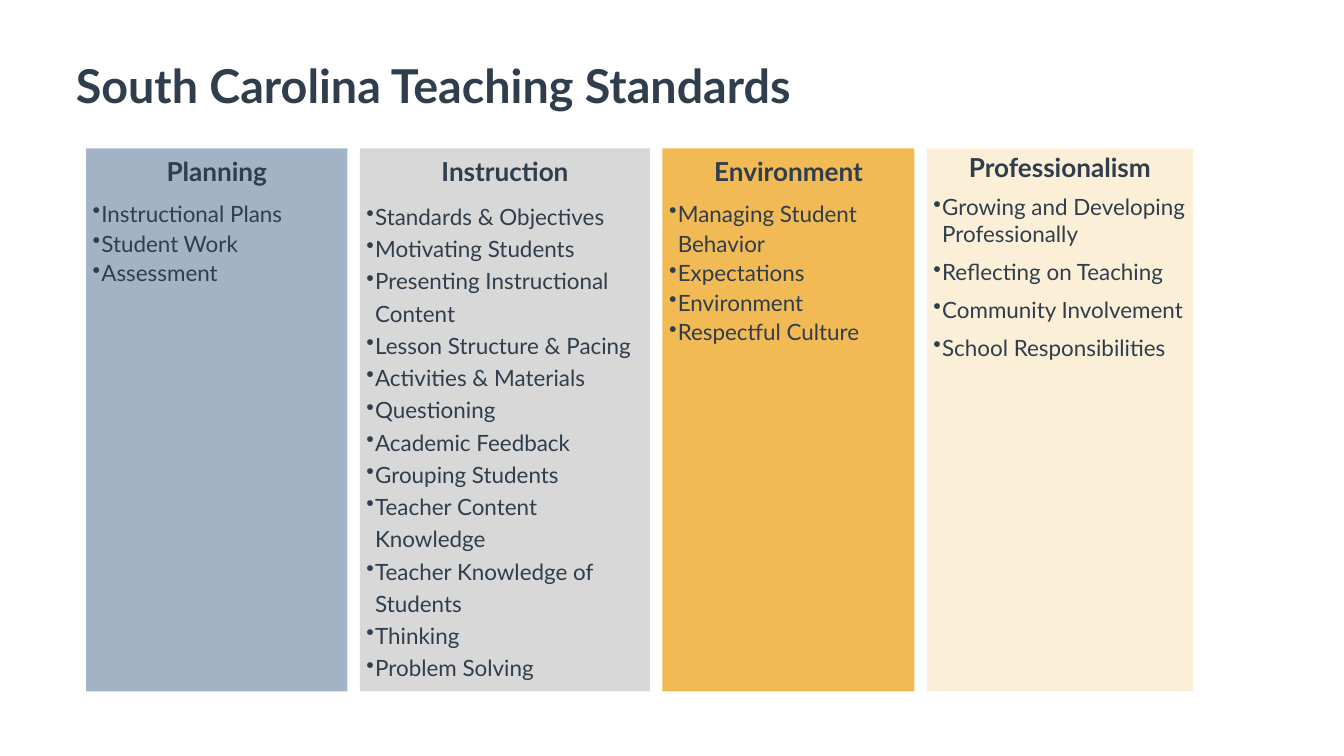
from dataclasses import dataclass

from lxml import etree
from pptx import Presentation
from pptx.dml.color import RGBColor
from pptx.enum.shapes import MSO_SHAPE
from pptx.enum.text import MSO_ANCHOR, PP_ALIGN
from pptx.oxml.ns import qn
from pptx.slide import Slide
from pptx.util import Inches, Pt

RECTANGLE = MSO_SHAPE.RECTANGLE
TOP = MSO_ANCHOR.TOP
LEFT, CENTER = PP_ALIGN.LEFT, PP_ALIGN.CENTER

SLIDE_WIDTH, SLIDE_HEIGHT = Inches(20), Inches(11.25)
BULLET_INDENT = Inches(0.13)

# Percent of the slide's width or height
TITLE_AREA = (5.15, 7.02, 89.7, 10.67)
COLUMNS_LEFT, COLUMNS_TOP, COLUMNS_HEIGHT = 6.4, 19.64, 71.82
COLUMN_GAP = 0.92


@dataclass(frozen=True)
class Theme:
    font: str = "Lato"
    ink: str = "2F3D4C"
    blue: str = "A2B3C6"
    grey: str = "D8D8D8"
    gold: str = "F1BA55"
    cream: str = "FCEFD8"
    title_size: int = 50
    heading_size: int = 28
    item_size: int = 24


THEME = Theme()


@dataclass(frozen=True)
class Domain:
    heading: str
    indicators: tuple[str, ...]
    width: float
    fill: str
    heading_spacing: float = 1.1
    first_spacing: float = 1.1
    item_spacing: float = 1.1
    heading_gap: float = 12
    item_gap: float = 0


DOMAINS = (
    Domain("Planning", ("Instructional Plans", "Student Work", "Assessment"),
           19.45, THEME.blue),
    Domain("Instruction",
           ("Standards & Objectives", "Motivating Students",
            "Presenting Instructional Content", "Lesson Structure & Pacing",
            "Activities & Materials", "Questioning", "Academic Feedback",
            "Grouping Students", "Teacher Content Knowledge",
            "Teacher Knowledge of Students", "Thinking", "Problem Solving"),
           21.6, THEME.grey, first_spacing=1.2, item_spacing=1.2),
    Domain("Environment",
           ("Managing Student Behavior", "Expectations", "Environment",
            "Respectful Culture"),
           18.75, THEME.gold),
    Domain("Professionalism",
           ("Growing and Developing Professionally", "Reflecting on Teaching",
            "Community Involvement", "School Responsibilities"),
           19.8, THEME.cream, heading_spacing=1.0, first_spacing=1.0,
           heading_gap=11, item_gap=9),
)


def area(left: float, top: float, width: float, height: float) -> tuple[int, ...]:
    """Turn percentages of the slide into lengths."""
    return (int(SLIDE_WIDTH * left / 100), int(SLIDE_HEIGHT * top / 100),
            int(SLIDE_WIDTH * width / 100), int(SLIDE_HEIGHT * height / 100))


def style(paragraph, size: int, bold: bool = False) -> None:
    for run in paragraph.runs:
        run.font.name = THEME.font
        run.font.size = Pt(size)
        run.font.bold = bold
        run.font.color.rgb = RGBColor.from_string(THEME.ink)


def add_bullet(paragraph) -> None:
    properties = paragraph._p.get_or_add_pPr()
    properties.set("marL", str(BULLET_INDENT))
    properties.set("indent", str(-BULLET_INDENT))
    etree.SubElement(properties, qn("a:buChar"), char="•")


def add_title(slide: Slide, title: str) -> None:
    frame = slide.shapes.add_textbox(*area(*TITLE_AREA)).text_frame
    frame.word_wrap = True
    frame.text = title
    style(frame.paragraphs[0], THEME.title_size, bold=True)


def add_domain(slide: Slide, domain: Domain, left: float) -> None:
    column = slide.shapes.add_shape(
        RECTANGLE, *area(left, COLUMNS_TOP, domain.width, COLUMNS_HEIGHT))
    column.shadow.inherit = False
    column.fill.solid()
    column.fill.fore_color.rgb = RGBColor.from_string(domain.fill)
    column.line.fill.background()

    frame = column.text_frame
    frame.word_wrap = True
    frame.vertical_anchor = TOP
    frame.text = "\n".join((domain.heading, *domain.indicators))
    heading, *items = frame.paragraphs
    heading.alignment = CENTER
    heading.line_spacing = domain.heading_spacing
    style(heading, THEME.heading_size, bold=True)

    for index, item in enumerate(items):
        add_bullet(item)
        item.alignment = LEFT
        item.line_spacing = domain.item_spacing if index else domain.first_spacing
        item.space_before = Pt(domain.item_gap if index else domain.heading_gap)
        style(item, THEME.item_size)


def main() -> None:
    deck = Presentation()
    deck.slide_width, deck.slide_height = SLIDE_WIDTH, SLIDE_HEIGHT
    slide = deck.slides.add_slide(deck.slide_layouts[6])
    add_title(slide, "South Carolina Teaching Standards")
    left = COLUMNS_LEFT
    for domain in DOMAINS:
        add_domain(slide, domain, left)
        left += domain.width + COLUMN_GAP
    deck.save("out.pptx")


if __name__ == "__main__":
    main()
